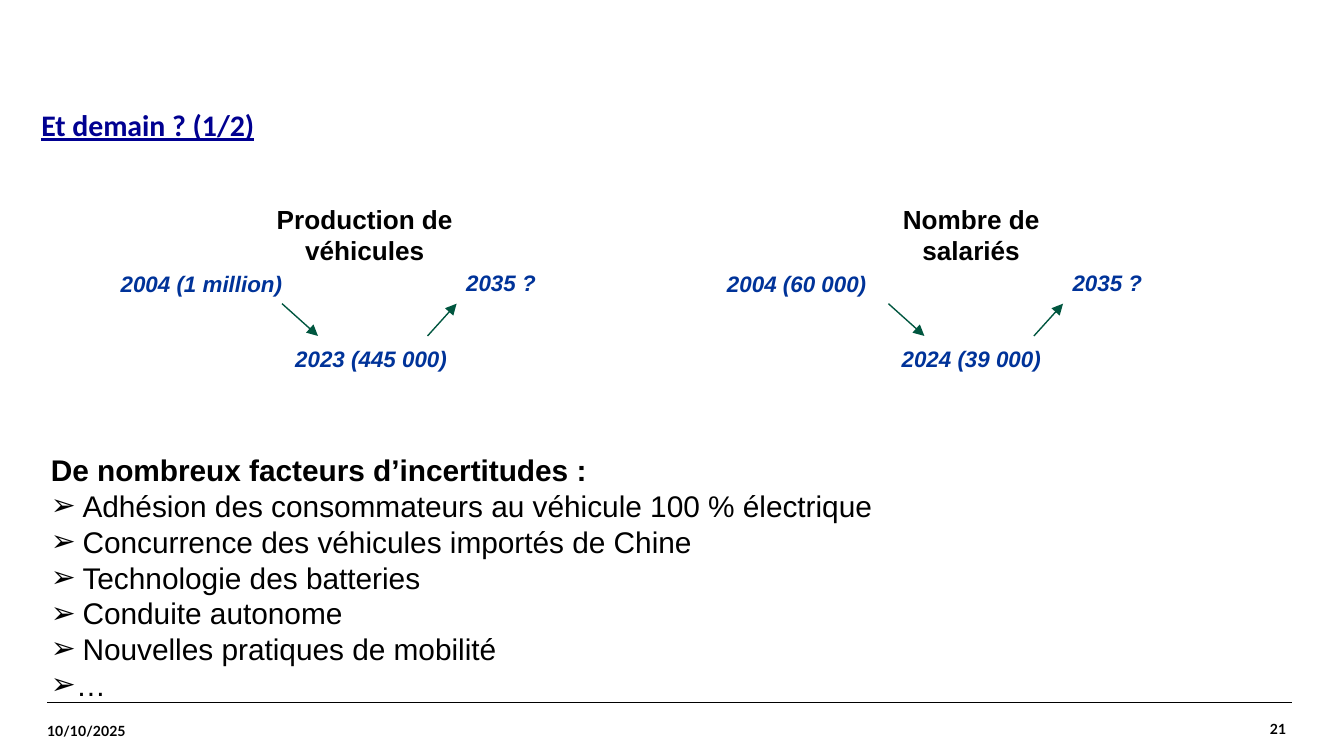
import pptx
import pptx.dml.color
import pptx.enum.shapes
import pptx.enum.text
import pptx.util
from lxml import etree
from pptx.oxml.ns import qn

Cm = pptx.util.Cm
Align = pptx.enum.text.PP_ALIGN
Anchor = pptx.enum.text.MSO_ANCHOR

COLOURS = {
    "text": "000000",
    "title": "000091",
    "figure": "003399",
    "arrow": "00563F",
}
LABEL_WIDTH = 4.39
TREND_STEP = 11.46
TRENDS = [
    ("Production de véhicules", "2004 (1 million)", "2023 (445 000)", "2035 ?"),
    ("Nombre de salariés", "2004 (60 000)", "2024 (39 000)", "2035 ?"),
]
FACTORS = [
    "Adhésion des consommateurs au véhicule 100 % électrique",
    "Concurrence des véhicules importés de Chine",
    "Technologie des batteries",
    "Conduite autonome",
    "Nouvelles pratiques de mobilité",
    "…",
]


def colour(name):
    return pptx.dml.color.RGBColor.from_string(COLOURS[name])


def style(paragraph, size, name="Arial", ink="text", bold=True, italic=False,
          align=Align.LEFT):
    paragraph.alignment = align
    font = paragraph.font
    font.name = name
    font.size = pptx.util.Pt(size)
    font.bold = bold
    font.italic = italic
    font.color.rgb = colour(ink)


def place(shape, left, top, width, height):
    shape.left, shape.top = Cm(left), Cm(top)
    shape.width, shape.height = Cm(width), Cm(height)


def prepare_frame(shape, anchor, margins=(0.25, 0.13)):
    frame = shape.text_frame
    frame.word_wrap = True
    frame.auto_size = pptx.enum.text.MSO_AUTO_SIZE.NONE
    frame.vertical_anchor = anchor
    frame.margin_left = frame.margin_right = Cm(margins[0])
    frame.margin_top = frame.margin_bottom = Cm(margins[1])
    return frame


def add_label(page, text, area, size, anchor=Anchor.TOP, margins=(0.25, 0.13),
              **look):
    box = page.shapes.add_textbox(*(Cm(length) for length in area))
    frame = prepare_frame(box, anchor, margins)
    frame.text = text
    style(frame.paragraphs[0], size, **look)


def add_line(page, start, end, ink, width, arrow=False):
    line = page.shapes.add_connector(
        pptx.enum.shapes.MSO_CONNECTOR.STRAIGHT,
        Cm(start[0]), Cm(start[1]), Cm(end[0]), Cm(end[1]))
    line.line.color.rgb = colour(ink)
    line.line.width = pptx.util.Pt(width)
    if arrow:
        etree.SubElement(line.line._get_or_add_ln(), qn("a:tailEnd"),
                         type="triangle")
    etree.SubElement(line._element.spPr, qn("a:effectLst"))


def set_bullet(paragraph, symbol, indent, hanging):
    """Give the paragraph a bullet, or none when symbol is None."""
    properties = paragraph._p.get_or_add_pPr()
    properties.set("marL", str(Cm(indent)))
    properties.set("indent", str(-Cm(hanging)))
    if symbol is None:
        etree.SubElement(properties, qn("a:buNone"))
        return
    ink = etree.SubElement(properties, qn("a:buClr"))
    etree.SubElement(ink, qn("a:srgbClr"), val=COLOURS["text"])
    etree.SubElement(properties, qn("a:buFont"), typeface="Arial")
    etree.SubElement(properties, qn("a:buChar"), char=symbol)


def fill_title(page):
    title = page.shapes.title
    place(title, 0.53, 1.85, 23.75, 1.02)
    frame = prepare_frame(title, Anchor.MIDDLE)
    frame.text = "Et demain ? (1/2)"
    style(frame.paragraphs[0], 16, name="Calibri", ink="title")
    frame.paragraphs[0].font.underline = True


def add_trend(page, left, heading, past, present, future):
    """Draw a heading above three figures joined by a falling and a rising arrow."""
    add_label(page, heading, (left + 2.67, 3.71, LABEL_WIDTH, 1.42), 14,
              align=Align.CENTER)
    figures = [(past, 0, 4.98), (present, 3.3, 6.4), (future, 6.53, 4.95)]
    for text, shift, top in figures:
        add_label(page, text, (left + shift, top, LABEL_WIDTH, 0.77), 12,
                  ink="figure", italic=True)
    high, low = 5.74, 6.35
    add_line(page, (left + 3.3, high), (left + 3.98, low), "arrow", 0.75, True)
    add_line(page, (left + 6.05, low), (left + 6.6, high), "arrow", 0.75, True)


def fill_factors(page):
    body = page.placeholders[1]
    place(body, 0.71, 8.41, 22.66, 5.66)
    frame = prepare_frame(body, Anchor.TOP)
    heading = frame.paragraphs[0]
    heading.text = "De nombreux facteurs d’incertitudes :"
    heading.space_before = pptx.util.Pt(0)
    set_bullet(heading, None, 0, 0)
    style(heading, 16)
    for factor in FACTORS:
        paragraph = frame.add_paragraph()
        paragraph.text = factor
        paragraph.space_before = pptx.util.Pt(0)
        indent = 0.48 if factor == "…" else 0.6
        set_bullet(paragraph, "➢", indent, indent)
        style(paragraph, 16, bold=False)


def add_footer(page):
    for left in (0.89, 0.99):
        add_line(page, (left, 13.28), (left + 23.42, 13.28), "text", 0.8)
    footers = [("10/10/2025", (0.89, 13.34, 3.25, 0.97), Align.LEFT),
               ("21", (20.55, 13.28, 3.76, 0.99), Align.RIGHT)]
    for text, area, align in footers:
        add_label(page, text, area, 7.5, anchor=Anchor.MIDDLE, margins=(0, 0),
                  name="Lato", align=align)


def main():
    deck = pptx.Presentation()
    deck.slide_width, deck.slide_height = Cm(25.4), Cm(14.29)
    page = deck.slides.add_slide(deck.slide_layouts[1])
    fill_title(page)
    for number, trend in enumerate(TRENDS):
        add_trend(page, 2.03 + number * TREND_STEP, *trend)
    fill_factors(page)
    add_footer(page)
    deck.save("out.pptx")


if __name__ == "__main__":
    main()
